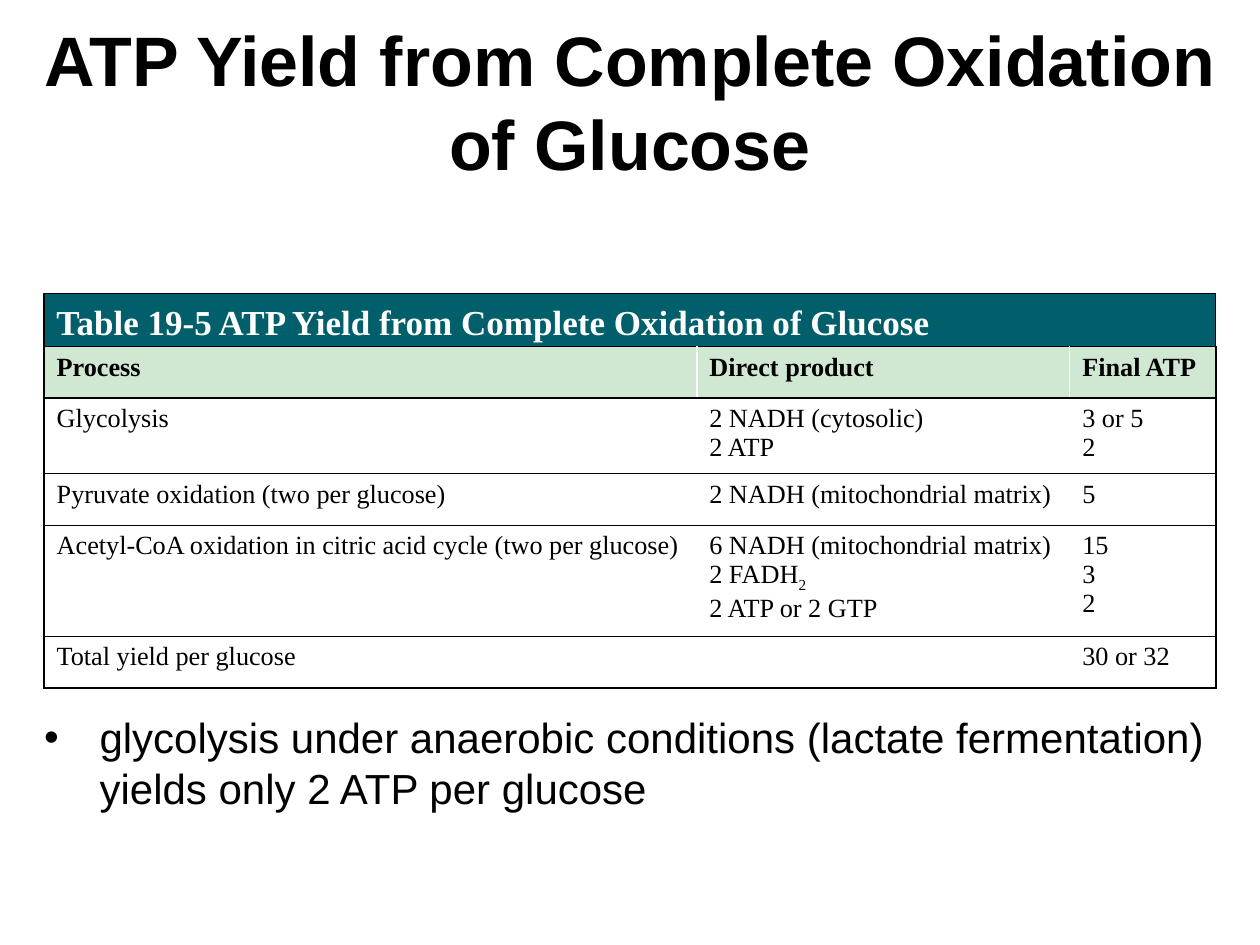
from lxml.etree import SubElement
from pptx import Presentation
from pptx.dml.color import RGBColor
from pptx.enum.shapes import MSO_SHAPE
from pptx.enum.text import MSO_ANCHOR, MSO_AUTO_SIZE, PP_ALIGN
from pptx.oxml.ns import qn
from pptx.util import Inches, Pt

BLACK = RGBColor(0x00, 0x00, 0x00)
WHITE = RGBColor(0xFF, 0xFF, 0xFF)
TEAL = RGBColor(0x00, 0x5F, 0x6A)
PALE_GREEN = RGBColor(0xD0, 0xE7, 0xD2)
HEADING_FONT = "Arial"
TABLE_FONT = "Times New Roman"

COLUMN_WIDTHS = [5.18, 2.96, 1.16]
ROW_HEIGHTS = [0.41, 0.6, 0.41, 0.88, 0.41]
SUBSCRIPT_MARK = "_"
ATP_ROWS = [
    ["Process", "Direct product", "Final ATP"],
    ["Glycolysis", "2 NADH (cytosolic)\n2 ATP", "3 or 5\n2"],
    ["Pyruvate oxidation (two per glucose)", "2 NADH (mitochondrial matrix)", "5"],
    ["Acetyl-CoA oxidation in citric acid cycle (two per glucose)",
     "6 NADH (mitochondrial matrix)\n2 FADH_2\n2 ATP or 2 GTP", "15\n3\n2"],
    ["Total yield per glucose", "", "30 or 32"],
]


def place(shape, box):
    """Move a shape to a box of left, top, width and height in inches."""
    shape.left, shape.top, shape.width, shape.height = map(Inches, box)


def add_run(paragraph, text, font_name, size, color=BLACK, bold=False):
    """Add one formatted run and return it."""
    run = paragraph.add_run()
    run.text = text
    run.font.name = font_name
    run.font.size = Pt(size)
    run.font.bold = bold
    run.font.color.rgb = color
    return run


def fill_title(title, box):
    """Place the slide title."""
    place(title, box)
    frame = title.text_frame
    frame.auto_size = MSO_AUTO_SIZE.NONE
    frame.vertical_anchor = MSO_ANCHOR.MIDDLE
    paragraph = frame.paragraphs[0]
    paragraph.alignment = PP_ALIGN.CENTER
    add_run(paragraph, "ATP Yield from Complete Oxidation of Glucose",
            HEADING_FONT, 40, bold=True)


def fill_body(body, box):
    """Place the bulleted remark."""
    place(body, box)
    frame = body.text_frame
    frame.auto_size = MSO_AUTO_SIZE.NONE
    paragraph = frame.paragraphs[0]
    properties = paragraph._p.get_or_add_pPr()
    properties.set("marL", str(Inches(0.5)))
    properties.set("indent", str(Inches(-0.44)))
    SubElement(properties, qn("a:buChar"), char="•")
    paragraph.space_before = Pt(0)
    add_run(paragraph,
            "glycolysis under anaerobic conditions (lactate fermentation) "
            "yields only 2 ATP per glucose", HEADING_FONT, 24)


def add_caption(slide, box):
    """Draw the coloured caption bar of the table."""
    caption = slide.shapes.add_shape(MSO_SHAPE.RECTANGLE, *map(Inches, box))
    caption.shadow.inherit = False
    caption.fill.solid()
    caption.fill.fore_color.rgb = TEAL
    caption.line.color.rgb = BLACK
    caption.line.width = Pt(0.75)
    frame = caption.text_frame
    frame.word_wrap = True
    frame.vertical_anchor = MSO_ANCHOR.MIDDLE
    paragraph = frame.paragraphs[0]
    paragraph.alignment = PP_ALIGN.LEFT
    add_run(paragraph, "Table 19-5 ATP Yield from Complete Oxidation of Glucose",
            TABLE_FONT, 20, WHITE, True)


def set_borders(cell, colors):
    """Give a cell its border colours by side: L, R, T and B."""
    properties = cell._tc.get_or_add_tcPr()
    for side, color in colors.items():
        line = SubElement(properties, qn(f"a:ln{side}"), w=str(Pt(1)))
        fill = SubElement(line, qn("a:solidFill"))
        SubElement(fill, qn("a:srgbClr"), val=str(color))


def write_cell(cell, text, bold):
    """Write lines of text, lowering whatever follows the subscript mark."""
    paragraph = cell.text_frame.paragraphs[0]
    for index, line in enumerate(text.split("\n")):
        if index:
            paragraph.add_line_break()
        base, _, subscript = line.partition(SUBSCRIPT_MARK)
        if base:
            add_run(paragraph, base, TABLE_FONT, 15, bold=bold)
        if subscript:
            run = add_run(paragraph, subscript, TABLE_FONT, 15, bold=bold)
            run.font._element.set("baseline", "-25000")


def add_yield_table(slide, box):
    """Build the table of ATP yields."""
    last = len(COLUMN_WIDTHS) - 1
    table = slide.shapes.add_table(
        len(ATP_ROWS), len(COLUMN_WIDTHS), *map(Inches, box)).table
    table.first_row = False
    table.horz_banding = False
    for column, width in zip(table.columns, COLUMN_WIDTHS):
        column.width = Inches(width)
    for row_index, texts in enumerate(ATP_ROWS):
        table.rows[row_index].height = Inches(ROW_HEIGHTS[row_index])
        header = row_index == 0
        for column_index, text in enumerate(texts):
            cell = table.cell(row_index, column_index)
            set_borders(cell, {
                "L": BLACK if column_index == 0 else WHITE,
                "R": BLACK if column_index == last else WHITE,
                "T": BLACK,
                "B": BLACK,
            })
            cell.fill.solid()
            cell.fill.fore_color.rgb = PALE_GREEN if header else WHITE
            write_cell(cell, text, header)


def build_slide(presentation):
    """Lay out the title, the captioned table and the remark."""
    slide = presentation.slides.add_slide(presentation.slide_layouts[1])
    fill_title(slide.shapes.title, (0, 0.17, 10, 1.25))
    add_caption(slide, (0.35, 2.33, 9.3, 0.44))
    add_yield_table(slide, (0.35, 2.75, sum(COLUMN_WIDTHS), sum(ROW_HEIGHTS)))
    fill_body(slide.placeholders[1], (0.19, 5.6, 9.62, 1.24))


def main():
    """Create and save the presentation."""
    presentation = Presentation()
    presentation.slide_width = Inches(10)
    presentation.slide_height = Inches(7.5)
    build_slide(presentation)
    presentation.save("out.pptx")


if __name__ == "__main__":
    main()
